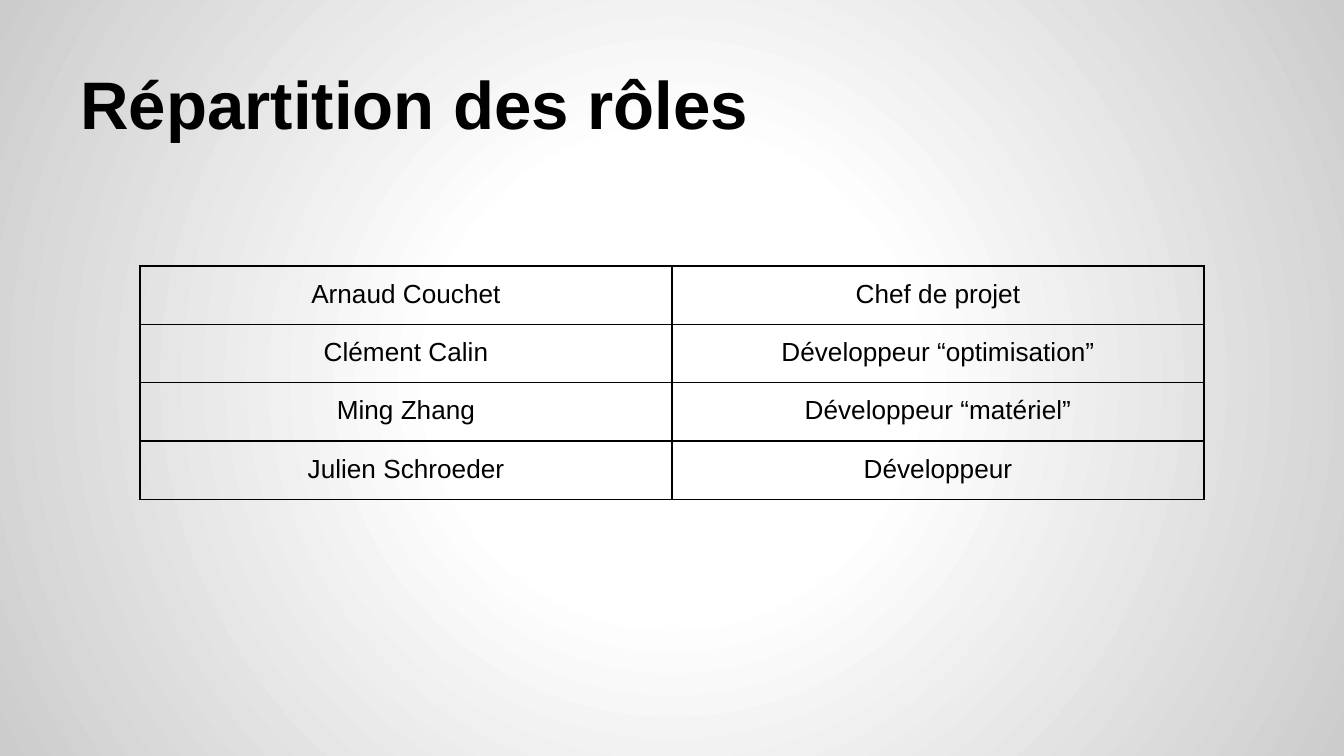
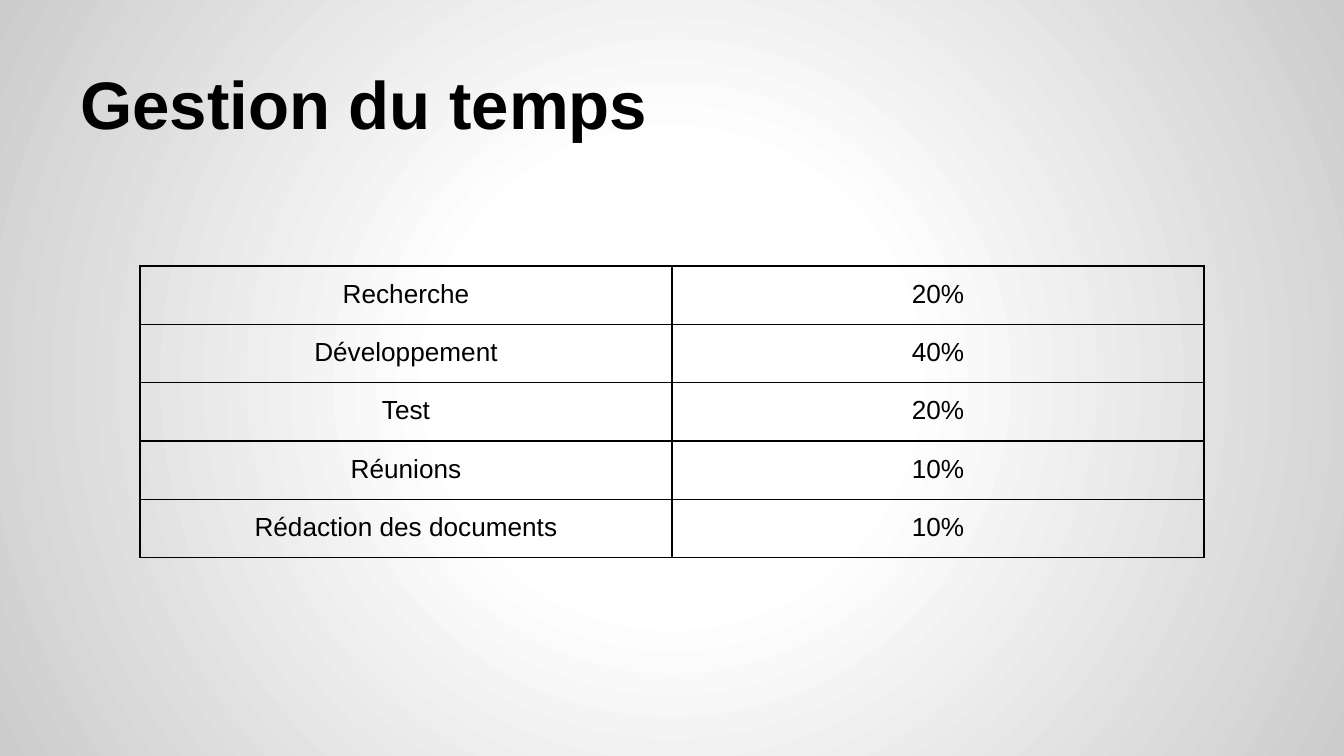
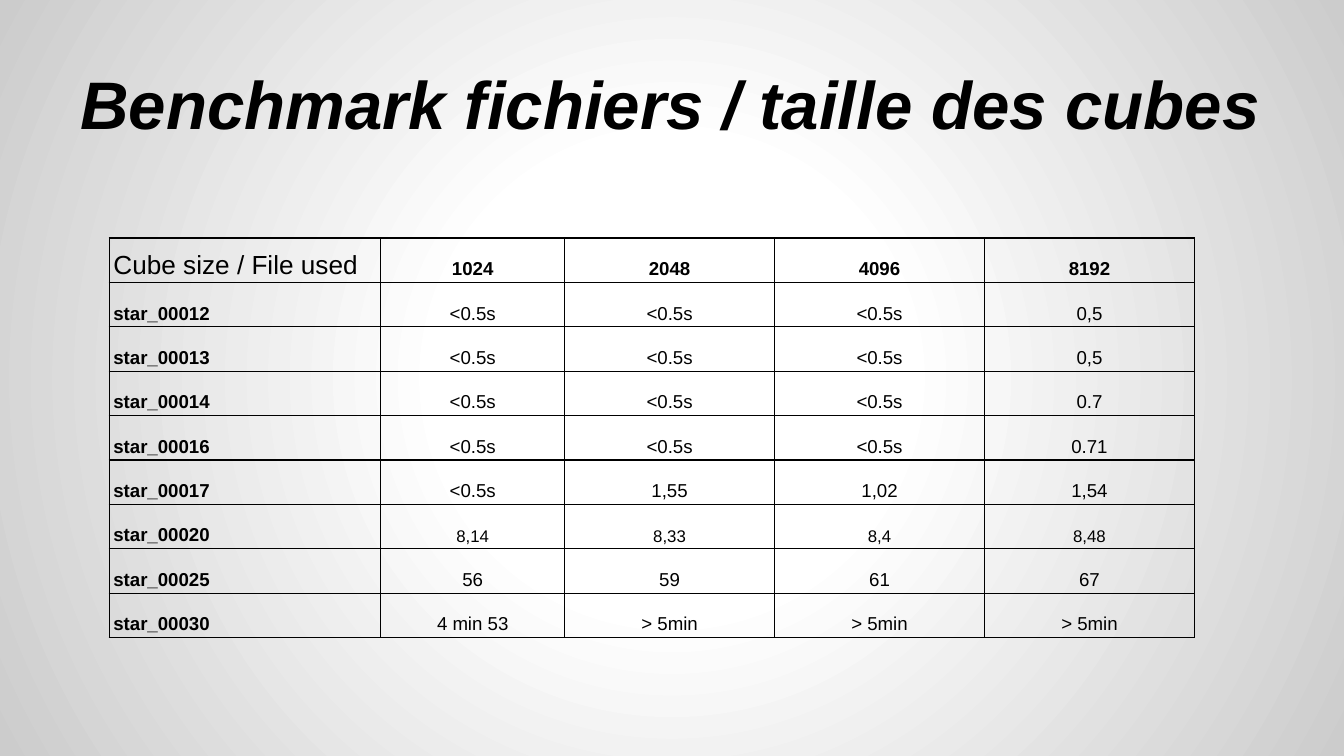
from dataclasses import dataclass, field

import pptx
import pptx.dml.color
import pptx.enum.text
import pptx.oxml
import pptx.oxml.ns
import pptx.presentation
import pptx.slide
import pptx.table
import pptx.util

Pt = pptx.util.Pt
Align = pptx.enum.text.PP_ALIGN
Anchor = pptx.enum.text.MSO_ANCHOR

COLORS = {"ink": "000000", "center": "FFFFFF", "edge": "CCCCCC"}
FONT = "Arial"
BORDER_WIDTH = 0.75
BLANK_LAYOUT = 6
GRADIENT_STOPS = [(0, "center"), (30, "center"), (100, "edge")]


@dataclass(frozen=True)
class TableStyle:
    left: float
    top: float
    column_widths: tuple[float, ...]
    row_height: float
    side_margin: float
    end_margin: float
    size: float
    anchor: Anchor = Anchor.TOP
    line_spacing: float | None = None
    has_headings: bool = False


@dataclass(frozen=True)
class TableSlide:
    title: str
    style: TableStyle
    rows: list[tuple[str, ...]]
    title_width: float = 648
    title_italic: bool = False
    special_sizes: dict[tuple[int, int], float] = field(default_factory=dict)


PAIRS = TableStyle(75, 142.5, (285, 285), 30, 7.2, 7.2, 14)
BENCHMARK = TableStyle(
    58.5, 127.5, (145.5, 98.5, 112.5, 112.5, 112.5), 23.8, 2.25, 1.5, 10,
    Anchor.BOTTOM, 1.15, True,
)
FAST = "<0.5s"
SLOW = "> 5min"

SLIDES = [
    TableSlide("Répartition des rôles", PAIRS, [
        ("Arnaud Couchet", "Chef de projet"),
        ("Clément Calin", "Développeur “optimisation”"),
        ("Ming Zhang", "Développeur “matériel”"),
        ("Julien Schroeder", "Développeur"),
    ]),
    TableSlide("Gestion du temps", PAIRS, [
        ("Recherche", "20%"),
        ("Développement", "40%"),
        ("Test", "20%"),
        ("Réunions", "10%"),
        ("Rédaction des documents", "10%"),
    ]),
    TableSlide("Benchmark fichiers / taille des cubes", BENCHMARK, [
        ("Cube size / File used", "1024", "2048", "4096", "8192"),
        ("star_00012", FAST, FAST, FAST, "0,5"),
        ("star_00013", FAST, FAST, FAST, "0,5"),
        ("star_00014", FAST, FAST, FAST, "0.7"),
        ("star_00016", FAST, FAST, FAST, "0.71"),
        ("star_00017", FAST, "1,55", "1,02", "1,54"),
        ("star_00020", "8,14", "8,33", "8,4", "8,48"),
        ("star_00025", "56", "59", "61", "67"),
        ("star_00030", "4 min 53", SLOW, SLOW, SLOW),
    ], 661, True, {(0, 0): 14} | {(6, column): 9 for column in range(1, 5)}),
]


def set_background(master: pptx.slide.SlideMaster) -> None:
    master.background.fill.gradient()
    gradient = master.element.xpath(".//p:bg//a:gradFill")[0]
    stops = "".join(
        f'<a:gs pos="{position * 1000}"><a:srgbClr val="{COLORS[color]}"/></a:gs>'
        for position, color in GRADIENT_STOPS
    )
    radial = pptx.oxml.parse_xml(
        f'<a:gradFill {pptx.oxml.ns.nsdecls("a")} rotWithShape="1">'
        f'<a:gsLst>{stops}</a:gsLst><a:path path="circle">'
        '<a:fillToRect l="50000" t="50000" r="50000" b="50000"/>'
        "</a:path></a:gradFill>"
    )
    gradient.getparent().replace(gradient, radial)


def format_text(text_frame, size: float, bold: bool = False, italic: bool = False) -> None:
    for paragraph in text_frame.paragraphs:
        for run in paragraph.runs:
            run.font.name = FONT
            run.font.size = Pt(size)
            run.font.bold = bold
            run.font.italic = italic
            run.font.color.rgb = pptx.dml.color.RGBColor.from_string(COLORS["ink"])


def add_title(slide: pptx.slide.Slide, content: TableSlide) -> None:
    shape = slide.shapes.add_textbox(Pt(36), Pt(16.5), Pt(content.title_width), Pt(67.5))
    text_frame = shape.text_frame
    text_frame.word_wrap = True
    text_frame.vertical_anchor = Anchor.BOTTOM
    text_frame.margin_left = text_frame.margin_right = Pt(7.2)
    text_frame.margin_top = text_frame.margin_bottom = Pt(7.2)
    text_frame.text = content.title
    format_text(text_frame, 36, True, content.title_italic)


def add_borders(cell: pptx.table._Cell) -> None:
    properties = cell._tc.get_or_add_tcPr()
    for index, side in enumerate("LRTB"):
        properties.insert(index, pptx.oxml.parse_xml(
            f'<a:ln{side} {pptx.oxml.ns.nsdecls("a")} w="{Pt(BORDER_WIDTH)}">'
            f'<a:solidFill><a:srgbClr val="{COLORS["ink"]}"/></a:solidFill>'
            f"</a:ln{side}>"
        ))


def fill_cell(cell: pptx.table._Cell, text: str, style: TableStyle,
              size: float, row: int, column: int) -> None:
    cell.fill.background()
    add_borders(cell)
    cell.margin_left = cell.margin_right = Pt(style.side_margin)
    cell.margin_top = cell.margin_bottom = Pt(style.end_margin)
    cell.vertical_anchor = style.anchor
    cell.text_frame.text = text
    paragraph = cell.text_frame.paragraphs[0]
    is_label = style.has_headings and column == 0
    paragraph.alignment = Align.LEFT if is_label else Align.CENTER
    paragraph.line_spacing = style.line_spacing
    bold = style.has_headings and (row == 0) != (column == 0)
    format_text(cell.text_frame, size, bold)


def add_table(slide: pptx.slide.Slide, content: TableSlide) -> None:
    style = content.style
    table = slide.shapes.add_table(
        len(content.rows), len(style.column_widths), Pt(style.left), Pt(style.top),
        Pt(sum(style.column_widths)), Pt(style.row_height * len(content.rows)),
    ).table
    table.first_row = table.horz_banding = False
    for column, width in zip(table.columns, style.column_widths):
        column.width = Pt(width)
    for row_index, values in enumerate(content.rows):
        table.rows[row_index].height = Pt(style.row_height)
        for column_index, text in enumerate(values):
            size = content.special_sizes.get((row_index, column_index), style.size)
            fill_cell(table.cell(row_index, column_index), text, style,
                      size, row_index, column_index)


def main() -> None:
    presentation = pptx.Presentation()
    presentation.slide_width = Pt(720)
    presentation.slide_height = Pt(405)
    set_background(presentation.slide_master)
    for content in SLIDES:
        slide = presentation.slides.add_slide(presentation.slide_layouts[BLANK_LAYOUT])
        add_title(slide, content)
        add_table(slide, content)
    presentation.save("out.pptx")


if __name__ == "__main__":
    main()
